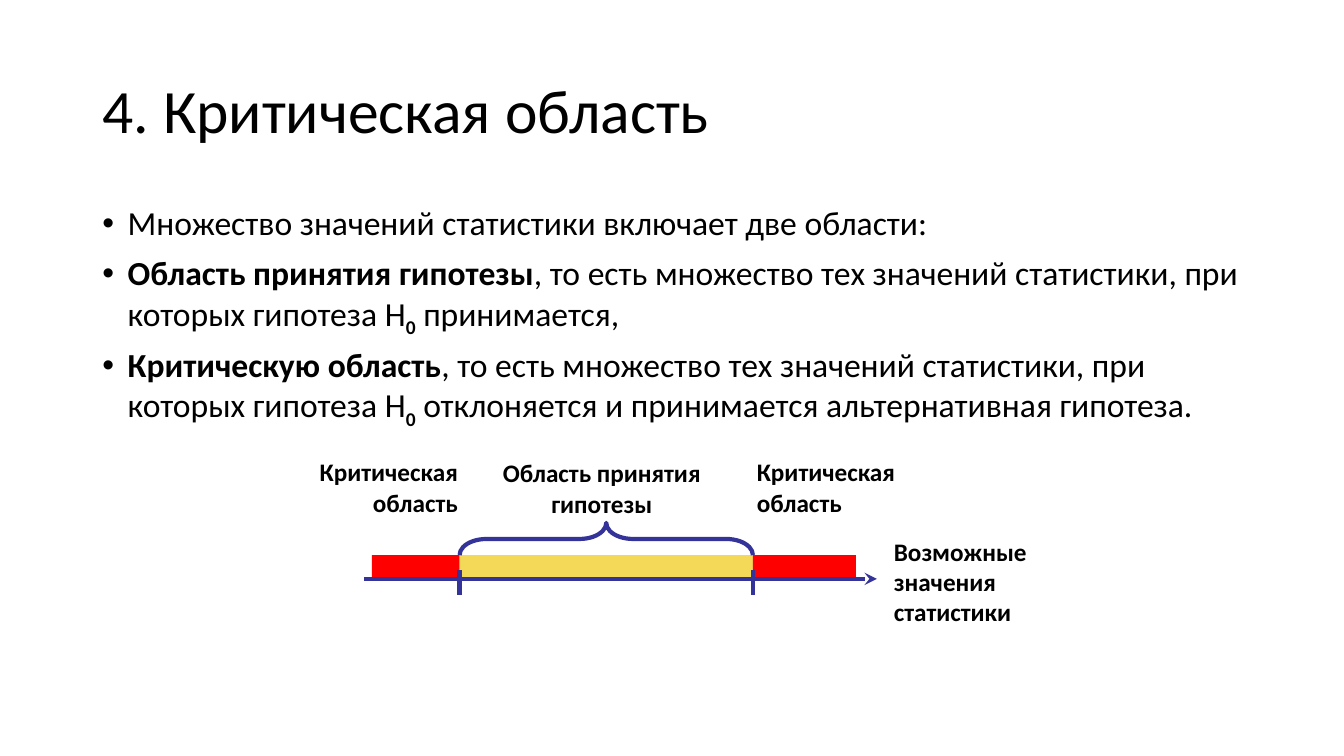
from lxml import etree
from pptx import Presentation
from pptx import util as u
from pptx.dml.color import RGBColor
from pptx.enum import shapes, text
from pptx.oxml.ns import qn

Pt = u.Pt
FONT = "Calibri"
COLOURS = {"text": "000000", "critical": "FF0000", "accepted": "F3D957", "axis": "333399"}


def style(span, size, bold):
    span.font.name = FONT
    span.font.size = Pt(size)
    span.font.bold = bold
    span.font.color.rgb = RGBColor.from_string(COLOURS["text"])


def axis_line(x1, y1, x2, y2):
    line = slide.shapes.add_connector(shapes.MSO_CONNECTOR.STRAIGHT, Pt(x1), Pt(y1), Pt(x2), Pt(y2))
    line.line.color.rgb = RGBColor.from_string(COLOURS["axis"])
    line.line.width = Pt(3)
    etree.SubElement(line._element.spPr, qn("a:effectLst"))
    return line


deck = Presentation()
deck.slide_width, deck.slide_height = Pt(960), Pt(540)
slide = deck.slides.add_slide(deck.slide_layouts[1])

# Title and list
title, body = slide.placeholders
title.left, title.top, title.width, title.height = Pt(66), Pt(28.8), Pt(828), Pt(104.4)
title.text_frame.text = "4. Критическая область"
title.text_frame.vertical_anchor = text.MSO_ANCHOR.MIDDLE
heading = title.text_frame.paragraphs[0]
heading.alignment = text.PP_ALIGN.LEFT
heading.line_spacing = 0.9
style(heading.runs[0], 44, False)

body.left, body.top, body.width, body.height = Pt(66), Pt(144), Pt(828), Pt(342.7)
shared = ", то есть множество тех значений статистики, при которых гипотеза H"
items = [
    [("Множество значений статистики включает две области:", "plain")],
    [("Область принятия гипотезы", "bold"), (shared, "plain"), ("0", "sub"),
     (" принимается,", "plain")],
    [("Критическую область", "bold"), (shared, "plain"), ("0", "sub"),
     (" отклоняется и принимается альтернативная гипотеза.", "plain")],
]
for index, item in enumerate(items):
    para = body.text_frame.paragraphs[0] if index == 0 else body.text_frame.add_paragraph()
    para.line_spacing = 0.9
    para.space_before = Pt(10 if index else 0)
    props = para._p.get_or_add_pPr()
    props.set("marL", str(Pt(18)))
    props.set("indent", str(Pt(-18)))
    etree.SubElement(props, qn("a:buFont")).set("typeface", "Arial")
    etree.SubElement(props, qn("a:buChar")).set("char", "•")
    for words, kind in item:
        span = para.add_run()
        span.text = words
        style(span, 24, kind != "plain")
        if kind == "sub":
            span.font._element.set("baseline", "-25000")

# Regions on the axis
axis_y, bar_height = 413.5, 17
left_end, lower, upper, right_end = 265.7, 328.3, 537.8, 611.3
regions = [(left_end, lower, "critical"), (lower, upper, "accepted"), (upper, right_end, "critical")]
for start, end, colour in regions:
    bar = slide.shapes.add_shape(shapes.MSO_SHAPE.RECTANGLE, Pt(start), Pt(axis_y - bar_height),
                                 Pt(end - start), Pt(bar_height))
    bar.fill.solid()
    bar.fill.fore_color.rgb = RGBColor.from_string(COLOURS[colour])
    bar.line.fill.background()
    bar.shadow.inherit = False

axis = axis_line(260, axis_y, 626.4, axis_y)
etree.SubElement(axis.line._get_or_add_ln(), qn("a:tailEnd")).set("type", "stealth")
for bound in (lower, upper):
    axis_line(bound, 407.5, bound, 424.8)

# Brace over the acceptance region, turned so that its tip points up
depth, length = 23, upper - lower
middle_x, middle_y = (lower + upper) / 2, axis_y - bar_height - depth / 2
brace = slide.shapes.add_shape(shapes.MSO_SHAPE.LEFT_BRACE, Pt(middle_x - depth / 2),
                               Pt(middle_y - length / 2), Pt(depth), Pt(length))
brace.rotation = 90
brace.adjustments[0] = 0.83
brace.adjustments[1] = 0.5
brace.fill.background()
brace.line.color.rgb = RGBColor.from_string(COLOURS["axis"])
brace.line.width = Pt(3)
brace.shadow.inherit = False

# Labels: left, top, width, height, alignment, wrap, paragraphs
LEFT, CENTER, RIGHT = text.PP_ALIGN.LEFT, text.PP_ALIGN.CENTER, text.PP_ALIGN.RIGHT
labels = [
    (349.2, 323.3, 161.3, 51, CENTER, False, "Область принятия\nгипотезы"),
    (533.5, 322.6, 135.4, 50.4, LEFT, True, "Критическая область"),
    (198.7, 322.6, 135.4, 50.4, RIGHT, True, "Критическая область"),
    (631.4, 379.4, 135.4, 72, LEFT, True, "Возможные значения статистики"),
]
for left, top, width, height, alignment, wrap, words in labels:
    box = slide.shapes.add_textbox(Pt(left), Pt(top), Pt(width), Pt(height))
    box.text_frame.word_wrap = wrap
    box.text_frame.text = words
    for para in box.text_frame.paragraphs:
        para.alignment = alignment
        style(para.runs[0], 18, True)

deck.save("out.pptx")
